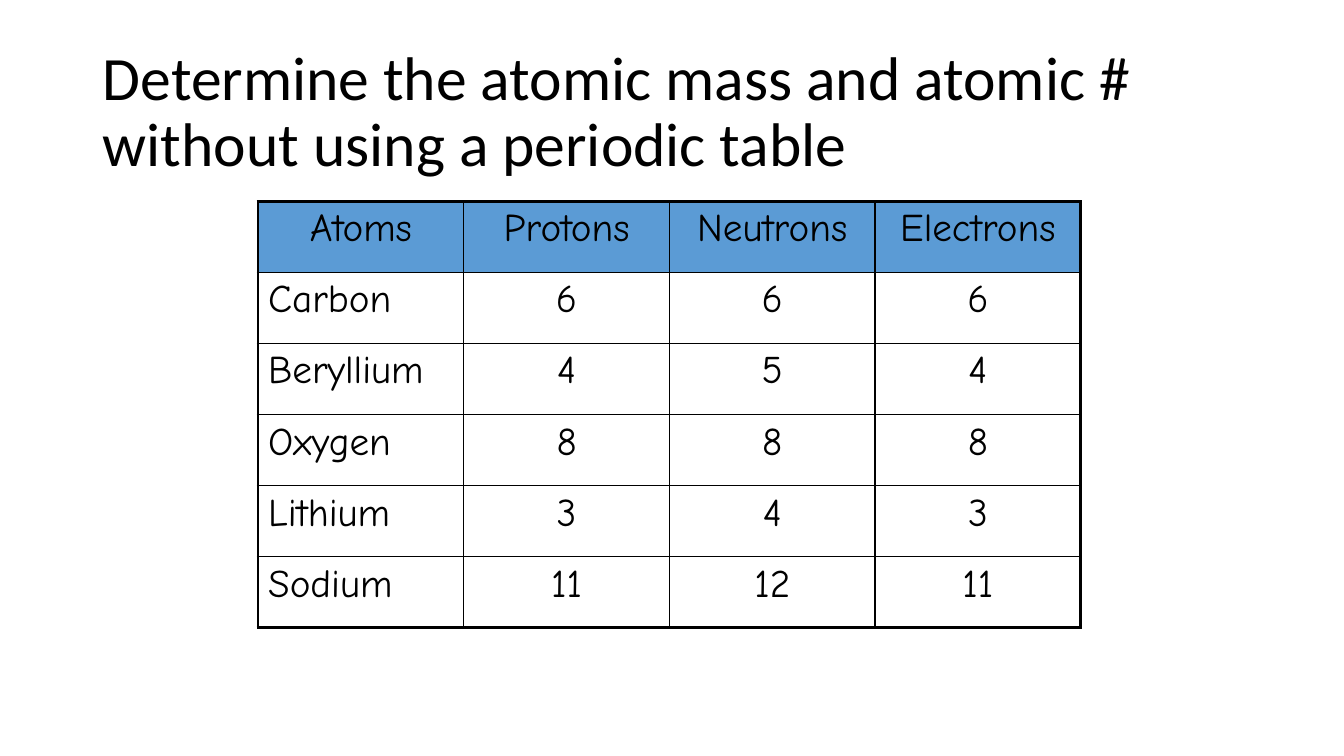
import dataclasses

import lxml.etree
import pptx
import pptx.dml.color
import pptx.enum.text
import pptx.oxml.ns
import pptx.util


@dataclasses.dataclass(frozen=True)
class Theme:
    ink: str = "000000"
    header_fill: str = "5B9BD5"
    title_font: str = "Calibri"
    table_font: str = "Comic Neue"
    title_size: float = 44
    table_size: float = 28
    outer_line: float = 2.25
    inner_line: float = 1


class SlideBuilder:
    def __init__(self, presentation, theme):
        self.theme = theme
        self.width = presentation.slide_width
        self.height = presentation.slide_height
        self.slide = presentation.slides.add_slide(presentation.slide_layouts[5])

    def box(self, left, top, width, height):
        """Turn shares of the slide's size into lengths."""
        return (int(left * self.width), int(top * self.height),
                int(width * self.width), int(height * self.height))

    def style(self, paragraph, font_name, size, alignment):
        paragraph.alignment = alignment
        paragraph.font.name = font_name
        paragraph.font.size = pptx.util.Pt(size)
        paragraph.font.color.rgb = pptx.dml.color.RGBColor.from_string(self.theme.ink)

    def title(self, text, *shares):
        shape = self.slide.shapes.title
        shape.left, shape.top, shape.width, shape.height = self.box(*shares)
        frame = shape.text_frame
        frame.text = text
        frame.word_wrap = True
        frame.auto_size = pptx.enum.text.MSO_AUTO_SIZE.NONE
        frame.vertical_anchor = pptx.enum.text.MSO_ANCHOR.MIDDLE
        paragraph = frame.paragraphs[0]
        paragraph.line_spacing = 0.9
        self.style(paragraph, self.theme.title_font, self.theme.title_size,
                   pptx.enum.text.PP_ALIGN.LEFT)

    def table(self, records, *shares):
        row_count, column_count = len(records), len(records[0])
        left, top, width, height = self.box(*shares)
        table = self.slide.shapes.add_table(
            row_count, column_count, left, top, width, height).table
        for column in table.columns:
            column.width = width // column_count
        for row in table.rows:
            row.height = height // row_count
        for row_index, record in enumerate(records):
            for column_index, text in enumerate(record):
                cell = table.cell(row_index, column_index)
                self.borders(cell, {
                    "L": column_index == 0, "R": column_index == column_count - 1,
                    "T": row_index == 0, "B": row_index == row_count - 1})
                self.cell(cell, text, row_index == 0, column_index == 0)

    def cell(self, cell, text, is_header, is_label):
        if is_header:
            cell.fill.solid()
            cell.fill.fore_color.rgb = pptx.dml.color.RGBColor.from_string(
                self.theme.header_fill)
        else:
            cell.fill.background()
        cell.text = text
        paragraph = cell.text_frame.paragraphs[0]
        paragraph.space_before = pptx.util.Pt(0.2 * self.theme.table_size)
        paragraph.font.bold = False
        alignment = pptx.enum.text.PP_ALIGN
        self.style(paragraph, self.theme.table_font, self.theme.table_size,
                   alignment.LEFT if is_label and not is_header else alignment.CENTER)

    def borders(self, cell, outer_sides):
        qn = pptx.oxml.ns.qn
        properties = cell._tc.get_or_add_tcPr()
        for side, is_outer in outer_sides.items():
            weight = self.theme.outer_line if is_outer else self.theme.inner_line
            line = lxml.etree.SubElement(
                properties, qn(f"a:ln{side}"), w=str(int(pptx.util.Pt(weight))))
            fill = lxml.etree.SubElement(line, qn("a:solidFill"))
            lxml.etree.SubElement(fill, qn("a:srgbClr"), val=self.theme.ink)


ATOMS = [
    ("Atoms", "Protons", "Neutrons", "Electrons"),
    ("Carbon", "6", "6", "6"),
    ("Beryllium", "4", "5", "4"),
    ("Oxygen", "8", "8", "8"),
    ("Lithium", "3", "4", "3"),
    ("Sodium", "11", "12", "11"),
]


def main():
    presentation = pptx.Presentation()
    presentation.slide_width = pptx.util.Inches(13.33)
    presentation.slide_height = pptx.util.Inches(7.5)
    builder = SlideBuilder(presentation, Theme())

    # Heading
    builder.title("Determine the atomic mass and atomic # without using a periodic table",
                  0.92 / 13.33, 0.4 / 7.5, 11.5 / 13.33, 1.45 / 7.5)

    # Particle counts
    builder.table(ATOMS, 2.56 / 13.33, 2 / 7.5, 8.16 / 13.33, 4.23 / 7.5)

    presentation.save("out.pptx")


if __name__ == "__main__":
    main()
